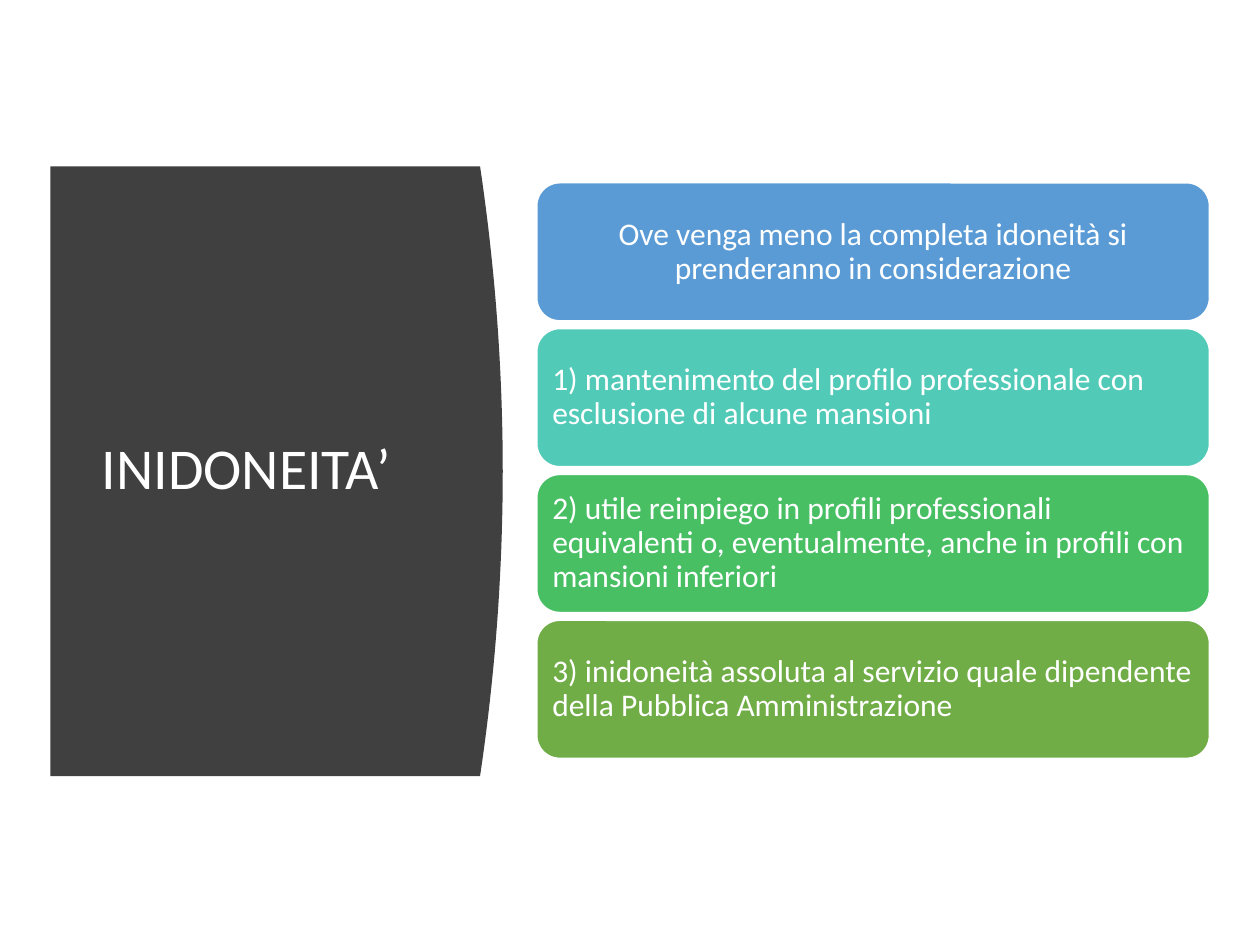
from dataclasses import dataclass

from pptx import Presentation
from pptx.dml.color import RGBColor
from pptx.enum.shapes import MSO_SHAPE
from pptx.enum.text import MSO_ANCHOR, PP_ALIGN
from pptx.util import Inches, Pt

ROUNDED = MSO_SHAPE.ROUNDED_RECTANGLE
MIDDLE = MSO_ANCHOR.MIDDLE
LEFT, CENTER = PP_ALIGN.LEFT, PP_ALIGN.CENTER


@dataclass(frozen=True)
class Theme:
    font: str = "Calibri"
    title_size: int = 33
    card_size: int = 18
    white: str = "FFFFFF"
    panel: str = "404040"
    cards: tuple = ("5B9BD5", "52CAB8", "49BF64", "70AD47")


THEME = Theme()
TITLE = "INIDONEITA’"
CARDS = (
    "Ove venga meno la completa idoneità si prenderanno in considerazione",
    "1) mantenimento del profilo professionale con esclusione di alcune mansioni",
    "2) utile reinpiego in profili professionali equivalenti o, eventualmente, "
    "anche in profili con mansioni inferiori",
    "3) inidoneità assoluta al servizio quale dipendente della Pubblica Amministrazione",
)


def rgb(value):
    return RGBColor.from_string(value)


def write(shape, text, size, align, inset):
    tf = shape.text_frame
    tf.word_wrap = True
    tf.vertical_anchor = MIDDLE
    tf.margin_left = tf.margin_right = Inches(inset)
    tf.margin_top = tf.margin_bottom = Inches(0.07)
    p = tf.paragraphs[0]
    p.text = text
    p.alignment = align
    p.line_spacing = 0.9
    p.font.name = THEME.font
    p.font.size = Pt(size)
    p.font.color.rgb = rgb(THEME.white)


def add_title_panel(s, left, top, width, height, bulge=0.18, steps=40):
    edge = left + width - bulge
    curve = [
        (Inches(edge + 4 * bulge * t * (1 - t)), Inches(top + height * t))
        for t in (i / steps for i in range(steps + 1))
    ]
    builder = s.shapes.build_freeform(Inches(left), Inches(top))
    builder.add_line_segments(curve + [(Inches(left), Inches(top + height))])
    panel = builder.convert_to_shape()
    panel.shadow.inherit = False
    panel.fill.solid()
    panel.fill.fore_color.rgb = rgb(THEME.panel)
    panel.line.fill.background()

    title = s.shapes.add_textbox(
        Inches(left + 0.31), Inches(top + 0.45), Inches(2.8), Inches(height - 0.9)
    )
    write(title, TITLE, THEME.title_size, LEFT, 0.1)


def add_cards(s, left, top, width, height, gap=0.06):
    card_height = (height - gap * (len(CARDS) - 1)) / len(CARDS)
    for i, (text, color) in enumerate(zip(CARDS, THEME.cards)):
        card = s.shapes.add_shape(
            ROUNDED,
            Inches(left),
            Inches(top + i * (card_height + gap)),
            Inches(width),
            Inches(card_height),
        )
        card.shadow.inherit = False
        card.fill.solid()
        card.fill.fore_color.rgb = rgb(color)
        card.line.color.rgb = rgb(THEME.white)
        card.line.width = Pt(1)
        write(card, text, THEME.card_size, LEFT if i else CENTER, 0.07)


def main():
    prs = Presentation()
    prs.slide_width = Inches(10)
    prs.slide_height = Inches(7.5)
    s = prs.slides.add_slide(prs.slide_layouts[6])
    add_title_panel(s, 0.4, 1.32, 3.59, 4.84)
    add_cards(s, 4.26, 1.45, 5.34, 4.57)
    prs.save("out.pptx")


if __name__ == "__main__":
    main()
